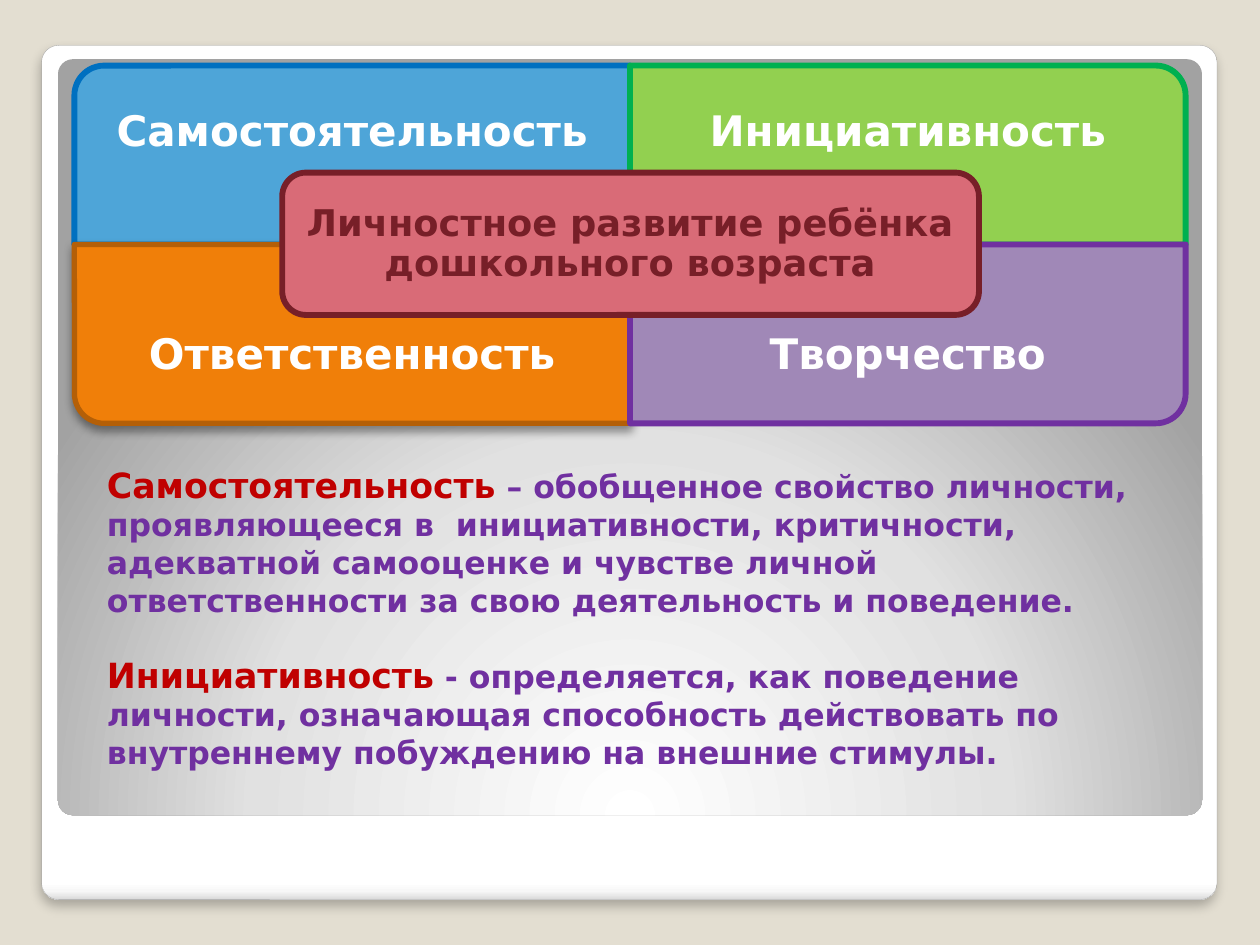
from dataclasses import dataclass

from lxml import etree
from pptx import Presentation
from pptx.dml.color import RGBColor
from pptx.enum.shapes import MSO_SHAPE
from pptx.enum.text import MSO_ANCHOR, PP_ALIGN
from pptx.oxml import parse_xml
from pptx.oxml.ns import qn
from pptx.util import Inches, Pt

ROUNDED = MSO_SHAPE.ROUNDED_RECTANGLE
ONE_CORNER = MSO_SHAPE.ROUND_1_RECTANGLE
MIDDLE, TOP = MSO_ANCHOR.MIDDLE, MSO_ANCHOR.TOP
CENTER, LEFT = PP_ALIGN.CENTER, PP_ALIGN.LEFT
NAMESPACE = 'xmlns:a="http://schemas.openxmlformats.org/drawingml/2006/main"'
FONT = "DejaVu Sans"
GRID_LEFT, GRID_TOP = 0.59, 0.52
COLUMN, ROW = 4.41, 1.42
LABEL_SHARE = 0.75
RED, PURPLE = "C00000", "7030A0"


@dataclass(frozen=True)
class Box:
    left: float
    top: float
    width: float
    height: float

    def emu(self):
        return [Inches(v) for v in (self.left, self.top, self.width, self.height)]


@dataclass(frozen=True)
class Shadow:
    alpha: int
    blur: float
    distance: float


@dataclass(frozen=True)
class Quality:
    label: str
    column: int
    row: int
    rotation: int
    fill: str
    line: str
    line_width: float = 3.35
    shadow: Shadow | None = None


@dataclass(frozen=True)
class Definition:
    term: str
    meaning: str


QUALITIES = [
    Quality("Самостоятельность", 0, 0, 270, "4EA5D8", "0070C0"),
    Quality("Инициативность", 1, 0, 0, "92D050", "00B050"),
    Quality("Ответственность", 0, 1, 180, "F07F09", "B45F07", 3, Shadow(40, 5.2, 3)),
    Quality("Творчество", 1, 1, 90, "A088B7", PURPLE),
]
DEFINITIONS = [
    Definition(
        "Самостоятельность",
        " – обобщенное свойство личности, проявляющееся в \u00a0инициативности, "
        "критичности, адекватной самооценке и чувстве личной ответственности "
        "за свою деятельность и поведение.",
    ),
    Definition(
        "Инициативность",
        " - определяется, как поведение личности, означающая способность "
        "действовать по внутреннему побуждению на внешние стимулы.",
    ),
]


def rgb(value: str) -> RGBColor:
    """Turn a hex string into a colour."""
    return RGBColor.from_string(value)


def add_panel(slide, kind, box: Box, fill: str | None = None, line: str | None = None,
              line_width: float = 3.35, shadow: Shadow | None = None):
    """Draw a preset shape with its fill, outline and optional shadow."""
    panel = slide.shapes.add_shape(kind, *box.emu())
    if fill:
        panel.fill.solid()
        panel.fill.fore_color.rgb = rgb(fill)
    if line:
        panel.line.color.rgb = rgb(line)
        panel.line.width = Pt(line_width)
    else:
        panel.line.fill.background()
    panel.shadow.inherit = False
    if shadow:
        effects = panel._element.spPr.find(qn("a:effectLst"))
        effects.append(parse_xml(
            f'<a:outerShdw {NAMESPACE} blurRad="{Pt(shadow.blur)}" dist="{Pt(shadow.distance)}" '
            f'dir="5400000" rotWithShape="0"><a:srgbClr val="000000">'
            f'<a:alpha val="{shadow.alpha * 1000}"/></a:srgbClr></a:outerShdw>'))
    return panel


def set_gradient(panel, stops: dict[int, str], direction: str) -> None:
    """Fill a shape with a gradient in the given direction."""
    panel.fill.background()
    gradient = etree.fromstring(f'<a:gradFill {NAMESPACE} rotWithShape="1"><a:gsLst/>{direction}</a:gradFill>')
    for position, color in stops.items():
        stop = etree.SubElement(gradient[0], qn("a:gs"), pos=str(position * 1000))
        etree.SubElement(stop, qn("a:srgbClr"), val=color)
    properties = panel._element.spPr
    properties.replace(properties.find(qn("a:noFill")), gradient)


def add_text_frame(slide, box: Box, anchor, margin: float):
    """Add a wrapping text box and return its frame."""
    frame = slide.shapes.add_textbox(*box.emu()).text_frame
    frame.word_wrap = True
    frame.vertical_anchor = anchor
    frame.margin_left = frame.margin_right = Inches(margin)
    frame.margin_top = frame.margin_bottom = Inches(margin)
    return frame


def format_run(run, size: float, color: str) -> None:
    """Set a bold run in the slide's font."""
    run.font.name = FONT
    run.font.size = Pt(size)
    run.font.bold = True
    run.font.color.rgb = rgb(color)


def add_label(slide, box: Box, text: str, size: float, color: str, margin: float) -> None:
    """Write a centred label."""
    frame = add_text_frame(slide, box, MIDDLE, margin)
    frame.text = text
    paragraph = frame.paragraphs[0]
    paragraph.alignment = CENTER
    paragraph.line_spacing = 0.9
    format_run(paragraph.runs[0], size, color)


def add_quality(slide, quality: Quality) -> None:
    """Draw one quarter of the grid with its label on the outer side."""
    left = GRID_LEFT + quality.column * COLUMN
    top = GRID_TOP + quality.row * ROW
    width, height = (ROW, COLUMN) if quality.rotation % 180 else (COLUMN, ROW)
    box = Box(left + (COLUMN - width) / 2, top + (ROW - height) / 2, width, height)
    quarter = add_panel(slide, ONE_CORNER, box, quality.fill, quality.line,
                        quality.line_width, quality.shadow)
    quarter.rotation = quality.rotation
    label_top = top + quality.row * ROW * (1 - LABEL_SHARE)
    add_label(slide, Box(left, label_top, COLUMN, ROW * LABEL_SHARE),
              quality.label, 24, "FFFFFF", 0.19)


def add_definitions(slide, box: Box) -> None:
    """Write each term followed by its meaning."""
    frame = add_text_frame(slide, box, TOP, 0.1)
    for index, definition in enumerate(DEFINITIONS):
        paragraph = frame.add_paragraph() if index else frame.paragraphs[0]
        paragraph.alignment = LEFT
        paragraph.space_before = Pt(20 * index)
        for text, size, color in ((definition.term, 19.8, RED), (definition.meaning, 18, PURPLE)):
            run = paragraph.add_run()
            run.text = text
            format_run(run, size, color)


def main() -> None:
    """Build the slide and save it."""
    deck = Presentation()
    deck.slide_width, deck.slide_height = Inches(10), Inches(7.5)
    slide = deck.slides.add_slide(deck.slide_layouts[6])
    slide.background.fill.solid()
    slide.background.fill.fore_color.rgb = rgb("E3DED1")

    card = add_panel(slide, ROUNDED, Box(0.33, 0.36, 9.33, 6.78), line="A4A4A4",
                     line_width=0.16, shadow=Shadow(25, 6, 4))
    set_gradient(card, {0: "FFFFFF", 98: "FFFFFF", 99: "F7F7F7", 100: "DADADA"},
                 '<a:lin ang="5400000" scaled="0"/>')
    backdrop = add_panel(slide, ROUNDED, Box(0.46, 0.47, 9.08, 6))
    set_gradient(backdrop, {0: "FFFFFF", 55: "E1E1E1", 100: "A2A2A2"},
                 '<a:path path="circle"><a:fillToRect l="50000" t="175000" r="50000" b="-75000"/></a:path>')
    for panel in (card, backdrop):
        panel.adjustments[0] = 0.02

    add_definitions(slide, Box(0.75, 3.58, 8.35, 2.65))
    for quality in QUALITIES:
        add_quality(slide, quality)
    add_panel(slide, ROUNDED, Box(2.24, 1.37, 5.53, 1.13), "D96B77", "771F28")
    add_label(slide, Box(2.29, 1.43, 5.42, 1.02),
              "Личностное развитие ребёнка дошкольного возраста", 21, "771F28", 0.09)
    deck.save("out.pptx")


if __name__ == "__main__":
    main()
